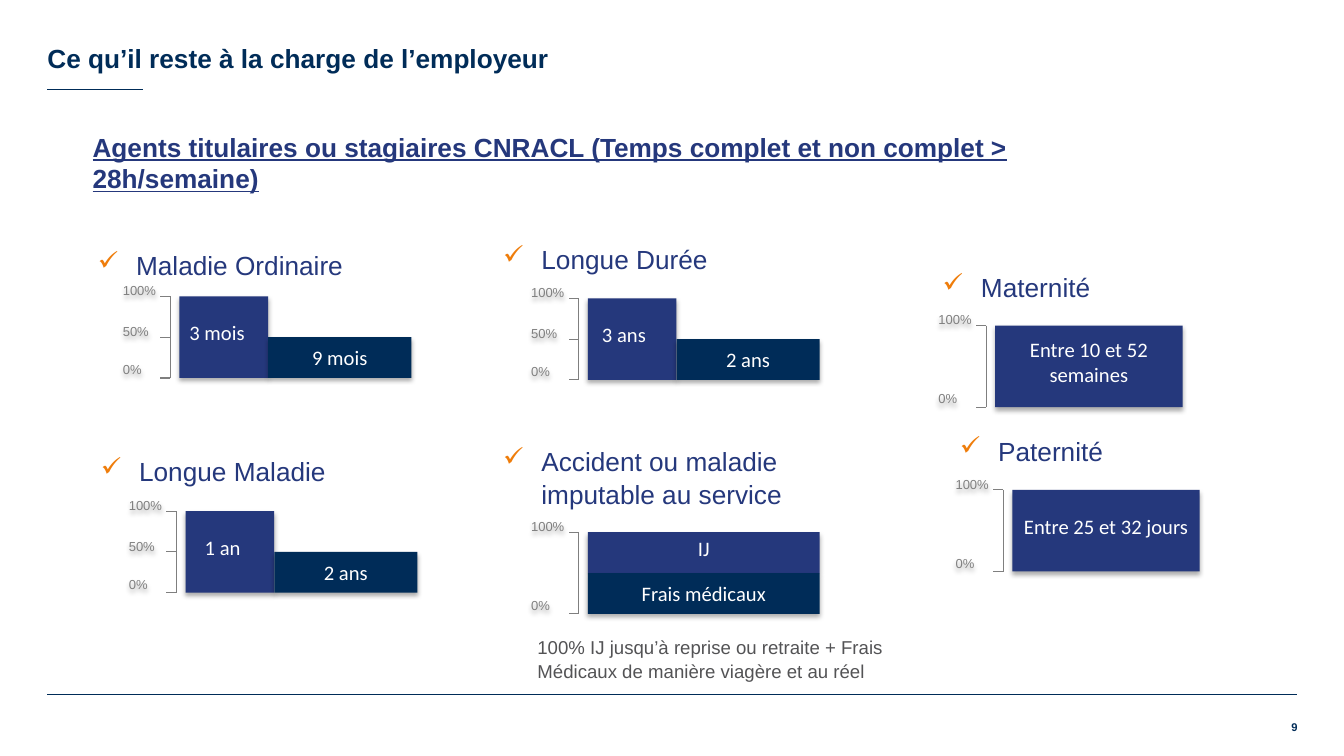
from dataclasses import dataclass

from pptx import Presentation
from pptx.dml.color import RGBColor
from pptx.enum.shapes import MSO_CONNECTOR, MSO_SHAPE
from pptx.enum.text import MSO_ANCHOR, PP_ALIGN
from pptx.oxml.ns import qn
from pptx.util import Inches, Pt
from lxml import etree

LEFT, CENTER, RIGHT = PP_ALIGN.LEFT, PP_ALIGN.CENTER, PP_ALIGN.RIGHT
TOP, MIDDLE, BOTTOM = MSO_ANCHOR.TOP, MSO_ANCHOR.MIDDLE, MSO_ANCHOR.BOTTOM
RECT, STRAIGHT = MSO_SHAPE.RECTANGLE, MSO_CONNECTOR.STRAIGHT


@dataclass(frozen=True)
class Theme:
    navy: str = "002C58"
    blue: str = "25387C"
    orange: str = "EF7D0B"
    gray: str = "808080"
    axis: str = "7F7F7F"
    note: str = "535355"
    white: str = "FFFFFF"
    sans: str = "Arial"
    body: str = "Calibri"
    head: float = 18.7
    bar: float = 14.7
    small: float = 13.3
    tick: float = 9.3
    page: float = 8


T = Theme()

TITLE = "Ce qu’il reste à la charge de l’employeur"
SCOPE = ("Agents titulaires ou stagiaires CNRACL "
         "(Temps complet et non complet > 28h/semaine)")
NOTE = ("100% IJ jusqu’à reprise ou retraite + Frais Médicaux "
        "de manière viagère et au réel")
PAGE = "9"

# Bars: left and width in inches, top and height as shares of the full scale
STEPS = [(0, 0, 0.88, 1), (0.88, 0.5, 1.42, 0.5)]
STACK = [(0, 0, 2.3, 0.5), (0, 0.5, 2.3, 0.5)]
BLOCK = [(0, 0, 1.86, 1)]
HALF, ENDS = (100, 50, 0), (100, 0)

# Heading, its place, chart origin, bar layout, ticks, words, left inset or None
CASES = [
    ("Maladie Ordinaire", (0.97, 2.46), (1.78, 2.94), STEPS, HALF,
     ["3 mois", "9 mois"], 0.1),
    ("Longue Maladie", (1, 4.5), (1.84, 5.07), STEPS, HALF,
     ["1 an", "2 ans"], 0.19),
    ("Longue Durée", (4.99, 2.4), (5.83, 2.96), STEPS, HALF,
     ["3 ans", "2 ans"], 0.14),
    ("Accident ou maladie imputable au service", (4.99, 4.4), (5.83, 5.28),
     STACK, ENDS, ["IJ", "Frais médicaux"], None),
    ("Maternité", (9.35, 2.68), (9.87, 3.23), BLOCK, ENDS,
     ["Entre 10 et 52 semaines"], None),
    ("Paternité", (9.52, 4.3), (10.04, 4.86), BLOCK, ENDS,
     ["Entre 25 et 32 jours"], None),
]
SCALE = 0.81
DROP = {100: 0.185, 50: 0.185, 0: 0.21}  # label top above its tick


def rgb(code):
    return RGBColor.from_string(code)


def write(shape, text, size, color, font=T.sans, bold=False, align=LEFT,
          anchor=TOP, pads=(0, 0, 0, 0)):
    frame = shape.text_frame
    frame.word_wrap = True
    frame.vertical_anchor = anchor
    (frame.margin_left, frame.margin_top,
     frame.margin_right, frame.margin_bottom) = map(Inches, pads)
    para = frame.paragraphs[0]
    para.alignment = align
    run = para.add_run()
    run.text = text
    run.font.size, run.font.name, run.font.bold = Pt(size), font, bold
    run.font.color.rgb = rgb(color)
    return para


def box(parent, *place):
    return parent.add_textbox(*map(Inches, place))


def line(parent, x1, y1, x2, y2, color, width):
    rule = parent.add_connector(STRAIGHT, *map(Inches, (x1, y1, x2, y2)))
    rule.line.color.rgb = rgb(color)
    rule.line.width = Pt(width)
    etree.SubElement(rule._element.spPr, qn("a:effectLst"))


def shade(shape):
    """Give the shape a soft shadow straight below it."""
    shape.shadow.inherit = False
    effects = shape._element.spPr.find(qn("a:effectLst"))
    outer = etree.SubElement(effects, qn("a:outerShdw"), blurRad=str(Pt(3.5)),
                             dist=str(Pt(2.2)), dir="5400000", rotWithShape="0")
    black = etree.SubElement(outer, qn("a:srgbClr"), val="000000")
    etree.SubElement(black, qn("a:alpha"), val="32000")


def check(para):
    """Put an orange check mark before a hanging paragraph."""
    props = para._p.get_or_add_pPr()
    props.set("marL", str(Inches(0.38)))
    props.set("indent", str(-Inches(0.38)))
    tint = etree.SubElement(props, qn("a:buClr"))
    etree.SubElement(tint, qn("a:srgbClr"), val=T.orange)
    etree.SubElement(props, qn("a:buChar"), char="✓")


def chart(parent, x, y, bars, ticks, words, inset):
    for i, ((dx, top, w, h), word) in enumerate(zip(bars, words)):
        place = (x + dx, y + top * SCALE, w, h * SCALE)
        bar = parent.add_shape(RECT, *map(Inches, place))
        bar.fill.solid()
        bar.fill.fore_color.rgb = rgb(T.navy if i else T.blue)
        bar.line.fill.background()
        shade(bar)
        first = i == 0
        hang = first and inset is not None
        pads = (inset if hang else 0.1, 0.05, 0.1, 0.14 if first else 0.05)
        write(bar, word, T.bar, T.white, T.body, anchor=MIDDLE,
              align=LEFT if hang else CENTER, pads=pads)
    axis = x - 0.09
    for tick in ticks:
        level = y + (1 - tick / 100) * SCALE
        label = box(parent, x - 0.66, level - DROP[tick], 0.66, 0.26)
        write(label, f"{tick}%", T.tick, T.gray, pads=(0.1, 0.05, 0.1, 0.05))
        shade(label)
        line(parent, axis, level, axis - 0.1, level, T.axis, 0.75)
    line(parent, axis, y, axis, y + SCALE, T.axis, 0.75)


def main():
    deck = Presentation()
    deck.slide_width, deck.slide_height = Inches(13.33), Inches(7.5)
    slide = deck.slides.add_slide(deck.slide_layouts[5])
    shapes = slide.shapes

    title = shapes.title
    title.left, title.top, title.width, title.height = map(
        Inches, (0.47, 0, 12.39, 0.73))
    write(title, TITLE, T.head, T.navy, bold=True, anchor=BOTTOM)
    for end, level in ((1.42, 0.89), (12.86, 6.89)):
        line(shapes, 0.47, level, end, level, T.navy, 0.5)

    scope = write(box(shapes, 0.82, 1.25, 9.37, 0.73), SCOPE, T.head, T.blue,
                  bold=True, pads=(0.1, 0.05, 0.1, 0.05))
    scope.runs[0].font.underline = True

    for name, (left, top), (x, y), bars, ticks, words, inset in CASES:
        chart(shapes.add_group_shape().shapes, x, y, bars, ticks, words, inset)
        head = write(box(shapes, left, top, 3.56, 0.5), name, T.head, T.blue)
        head.line_spacing = 1.05
        check(head)

    note = write(box(shapes, 5.33, 6.3, 3.89, 0.5), NOTE, T.small, T.note)
    note.line_spacing = 1.05
    write(box(shapes, 12.48, 7.15, 0.39, 0.2), PAGE, T.page, T.navy,
          bold=True, align=RIGHT)
    deck.save("out.pptx")


if __name__ == "__main__":
    main()
